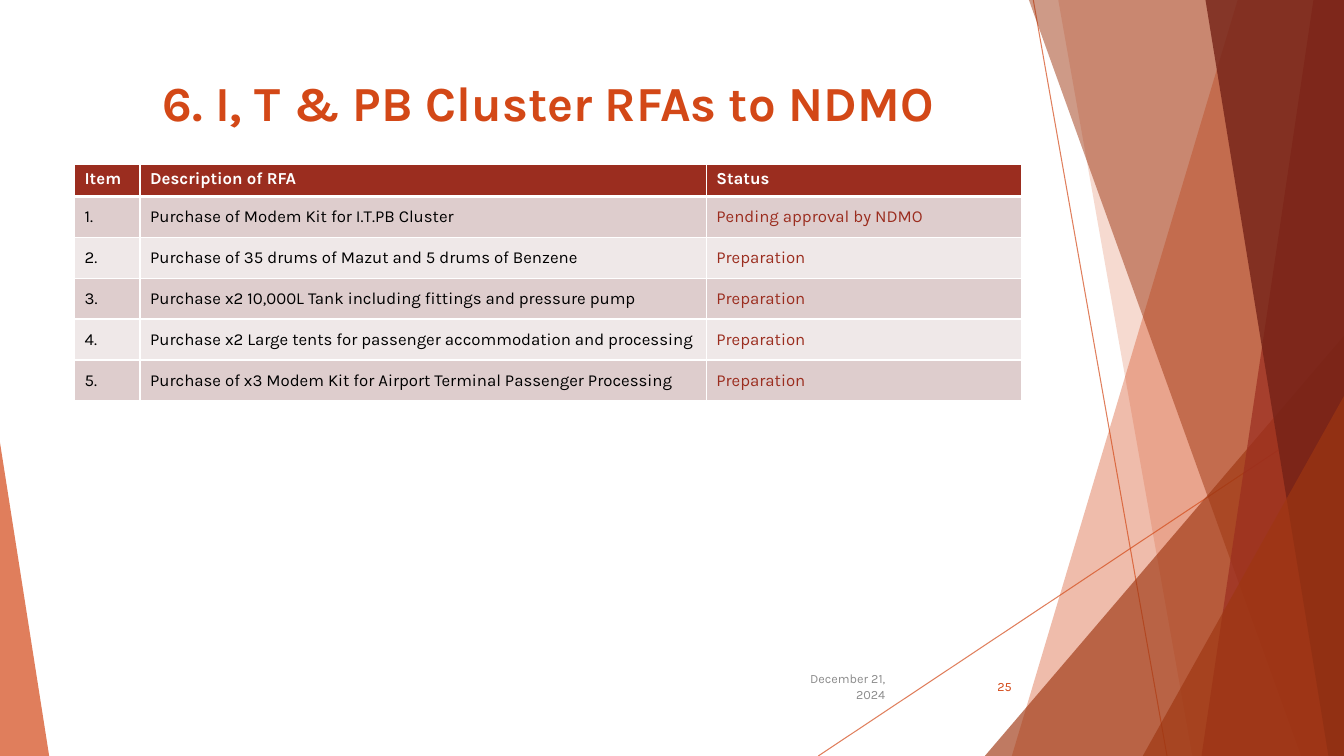
from dataclasses import dataclass
from typing import Any

from lxml.etree import SubElement
from pptx import Presentation
from pptx.dml.color import RGBColor
from pptx.enum.shapes import MSO_CONNECTOR, MSO_SHAPE
from pptx.enum.text import MSO_ANCHOR, MSO_AUTO_SIZE, PP_ALIGN
from pptx.oxml.ns import qn
from pptx.util import Cm, Pt

COLORS = {
    "orange": "D34817", "rust": "9E3611", "red": "9B2D1F", "maroon": "742217",
    "gray": "8C8C8C", "white": "FFFFFF", "black": "000000",
    "dark row": "DECDCD", "light row": "EFE8E8",
}
SLIDE_WIDTH, SLIDE_HEIGHT = 33.87, 19.05
LEFT, WIDTH = 1.88, 23.88
COLUMN_WIDTHS = (1.65, 14.27, 7.95)
HEADER_HEIGHT, ROW_HEIGHT = 0.81, 1.03
HEADER = ("Item", "Description of RFA", "Status")
REQUESTS = (
    ("Purchase of Modem Kit for I.T.PB Cluster", "Pending approval by NDMO"),
    ("Purchase of 35 drums of Mazut and 5 drums of Benzene", "Preparation"),
    ("Purchase x2 10,000L Tank including fittings and pressure pump", "Preparation"),
    ("Purchase x2 Large tents for passenger accommodation and processing", "Preparation"),
    ("Purchase of x3 Modem Kit for Airport Terminal Passenger Processing", "Preparation"),
)


@dataclass
class Ray:
    start: tuple[float, float]
    end: tuple[float, float]


@dataclass
class Band:
    top_left: float
    bottom_left: float
    color: str
    opacity: int


@dataclass
class Triangle:
    left: float
    top: float
    width: float
    apex: float
    color: str
    opacity: int


@dataclass
class FooterText:
    text: str
    left: float
    width: float
    color: str


DECORATION = (
    Ray((26.04, 0), (29.41, SLIDE_HEIGHT)),
    Ray((SLIDE_WIDTH, 10.24), (20.62, SLIDE_HEIGHT)),
    Band(31.19, 25.5, "orange", 36),
    Band(26.67, 30.05, "orange", 20),
    Triangle(24.82, 8.46, 9.05, 1, "rust", 66),
    Band(25.93, 32.79, "rust", 50),
    Band(33.1, 30.28, "red", 70),
    Band(30.38, 33.48, "maroon", 80),
    Triangle(28.8, 9.98, 5.07, 1, "rust", 66),
    Triangle(0, 11.15, 1.24, 0, "orange", 70),
)
FOOTER = (
    FooterText("December 21, 2024", 20.02, 2.54, "gray"),
    FooterText("25", 23.85, 1.9, "orange"),
)


def rgb(color: str) -> RGBColor:
    return RGBColor.from_string(COLORS[color])


def set_attributes(target: Any, values: dict[str, Any]) -> None:
    for name, value in values.items():
        setattr(target, name, value)


def format_text(paragraph: Any, text: str, size: int, color: str, bold: bool = False) -> None:
    paragraph.text = text
    font = paragraph.runs[0].font
    set_attributes(font, {"name": "Karla", "size": Pt(size), "bold": bold})
    font.color.rgb = rgb(color)


def set_opacity(shape: Any, percent: int) -> None:
    color = shape.element.spPr.find(".//" + qn("a:srgbClr"))
    SubElement(color, qn("a:alpha"), val=str(percent * 1000))


def draw_ray(slide: Any, ray: Ray) -> None:
    ends = [Cm(value) for value in (*ray.start, *ray.end)]
    connector = slide.shapes.add_connector(MSO_CONNECTOR.STRAIGHT, *ends)
    connector.line.color.rgb = rgb("orange")
    connector.line.width = Pt(0.75)
    set_opacity(connector, 70)
    SubElement(connector.element.spPr, qn("a:effectLst"))


def fill_shape(shape: Any, color: str, opacity: int) -> None:
    shape.shadow.inherit = False
    shape.fill.solid()
    shape.fill.fore_color.rgb = rgb(color)
    shape.line.fill.background()
    set_opacity(shape, opacity)


def draw_band(slide: Any, band: Band) -> None:
    builder = slide.shapes.build_freeform(Cm(band.top_left), 0)
    corners = ((SLIDE_WIDTH, 0), (SLIDE_WIDTH, SLIDE_HEIGHT), (band.bottom_left, SLIDE_HEIGHT))
    builder.add_line_segments([(Cm(x), Cm(y)) for x, y in corners], close=True)
    fill_shape(builder.convert_to_shape(), band.color, band.opacity)


def draw_triangle(slide: Any, triangle: Triangle) -> None:
    shape = slide.shapes.add_shape(
        MSO_SHAPE.ISOSCELES_TRIANGLE, Cm(triangle.left), Cm(triangle.top),
        Cm(triangle.width), Cm(SLIDE_HEIGHT - triangle.top))
    shape.adjustments[0] = triangle.apex
    fill_shape(shape, triangle.color, triangle.opacity)


def draw_title(slide: Any) -> None:
    title = slide.shapes.title
    set_attributes(title, {"left": Cm(LEFT), "top": Cm(1.7), "width": Cm(WIDTH), "height": Cm(3.66)})
    set_attributes(title.text_frame, {
        "vertical_anchor": MSO_ANCHOR.TOP, "auto_size": MSO_AUTO_SIZE.NONE, "word_wrap": True})
    paragraph = title.text_frame.paragraphs[0]
    format_text(paragraph, "6. I, T & PB Cluster RFAs to NDMO", 35, "orange", True)
    paragraph.alignment = PP_ALIGN.CENTER


def set_borders(cell: Any, row: int) -> None:
    properties = cell._tc.get_or_add_tcPr()
    widths = {"lnL": 1, "lnR": 1, "lnT": 3 if row == 1 else 1, "lnB": 3 if row == 0 else 1}
    for index, (side, width) in enumerate(widths.items()):
        border = SubElement(properties, qn("a:" + side), w=str(Pt(width)))
        SubElement(SubElement(border, qn("a:solidFill")), qn("a:srgbClr"), val=COLORS["white"])
        properties.insert(index, border)


def draw_table(slide: Any) -> None:
    rows = [HEADER] + [(f"{number}.", *request) for number, request in enumerate(REQUESTS, 1)]
    height = HEADER_HEIGHT + ROW_HEIGHT * len(REQUESTS)
    table = slide.shapes.add_table(
        len(rows), len(HEADER), Cm(LEFT), Cm(4.14), Cm(WIDTH), Cm(height)).table
    for column, width in zip(table.columns, COLUMN_WIDTHS):
        column.width = Cm(width)
    for row, texts in enumerate(rows):
        is_header = row == 0
        table.rows[row].height = Cm(HEADER_HEIGHT if is_header else ROW_HEIGHT)
        background = "red" if is_header else "dark row" if row % 2 else "light row"
        text_colors = ("white",) * 3 if is_header else ("black", "black", "red")
        for column, (text, color) in enumerate(zip(texts, text_colors)):
            cell = table.cell(row, column)
            cell.fill.solid()
            cell.fill.fore_color.rgb = rgb(background)
            cell.vertical_anchor = MSO_ANCHOR.TOP if is_header else MSO_ANCHOR.MIDDLE
            format_text(cell.text_frame.paragraphs[0], text, 12, color, is_header)
            set_borders(cell, row)


def draw_footer(slide: Any, footer: FooterText) -> None:
    box = slide.shapes.add_textbox(Cm(footer.left), Cm(16.79), Cm(footer.width), Cm(1.02))
    set_attributes(box.text_frame, {"word_wrap": True, "vertical_anchor": MSO_ANCHOR.MIDDLE})
    paragraph = box.text_frame.paragraphs[0]
    format_text(paragraph, footer.text, 9, footer.color)
    paragraph.alignment = PP_ALIGN.RIGHT


def main() -> None:
    presentation = Presentation()
    set_attributes(presentation, {"slide_width": Cm(SLIDE_WIDTH), "slide_height": Cm(SLIDE_HEIGHT)})
    slide = presentation.slides.add_slide(presentation.slide_layouts[5])
    painters = {Ray: draw_ray, Band: draw_band, Triangle: draw_triangle}
    for element in DECORATION:
        painters[type(element)](slide, element)
    draw_title(slide)
    draw_table(slide)
    for footer in FOOTER:
        draw_footer(slide, footer)
    presentation.save("out.pptx")


if __name__ == "__main__":
    main()
